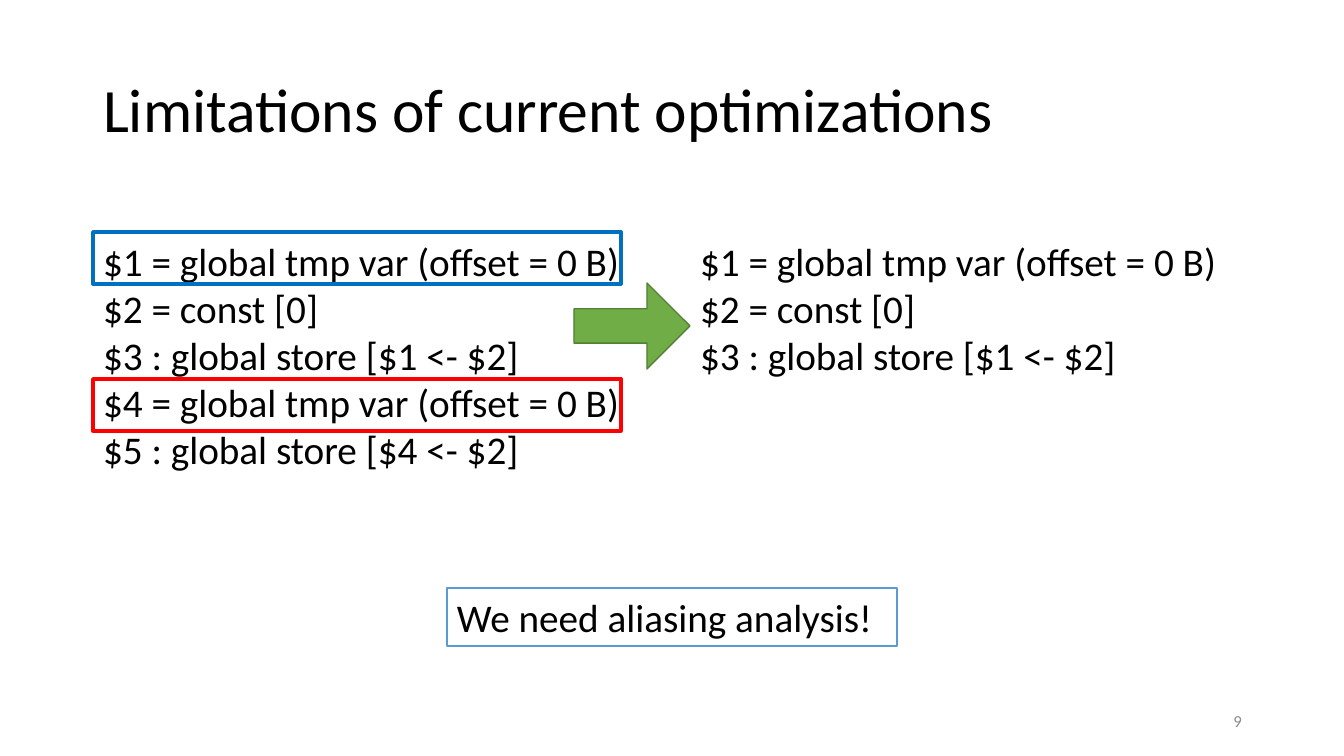
from pptx import Presentation
from pptx.dml.color import RGBColor
from pptx.enum.shapes import MSO_SHAPE
from pptx.enum.text import MSO_ANCHOR, MSO_AUTO_SIZE, PP_ALIGN
from pptx.oxml import parse_xml
from pptx.oxml.ns import nsdecls
from pptx.util import Pt

SCALE = 914400 / 100.8  # EMU per px
COLORS = {
    "text": "000000", "grey": "8C8C8C", "note": "5B9BD5", "red": "FF0000",
    "blue": "0070C0", "green": "70AD47", "edge": "538035",
}


def emu(px):
    return round(px * SCALE)


def color(name):
    return RGBColor.from_string(COLORS[name])


class Deck:
    def __init__(self, width, height):
        self.font = "Calibri"
        self.prs = Presentation()
        self.prs.slide_width, self.prs.slide_height = emu(width), emu(height)
        self.slide = self.prs.slides.add_slide(self.prs.slide_layouts[3])

    def text(self, shape, lines, size, tint="text", align=PP_ALIGN.LEFT,
             anchor=MSO_ANCHOR.TOP, pitch=1.0):
        frame = shape.text_frame
        frame.word_wrap = True
        frame.auto_size = MSO_AUTO_SIZE.NONE
        frame.vertical_anchor = anchor
        for i, line in enumerate(lines):
            par = frame.add_paragraph() if i else frame.paragraphs[0]
            par.alignment, par.line_spacing = align, pitch
            par.space_before = Pt(0)
            run = par.add_run()
            run.text = line
            run.font.name, run.font.size = self.font, Pt(size)
            run.font.color.rgb = color(tint)

    def holder(self, index, box, lines, size, **style):
        shape = self.slide.placeholders[index]
        shape.left, shape.top, shape.width, shape.height = map(emu, box)
        self.text(shape, lines, size, **style)
        return shape

    def title(self, box, text):
        self.holder(0, box, [text], 44, anchor=MSO_ANCHOR.MIDDLE, pitch=0.9)

    def code(self, index, box, lines):
        shape = self.holder(index, box, lines, 28)
        for par in shape.text_frame.paragraphs:
            props = par._p.get_or_add_pPr()
            props.set("marL", "0")
            props.set("indent", "0")
            props.append(parse_xml(f"<a:buNone {nsdecls('a')}/>"))

    def label(self, box, text, size, **style):
        shape = self.slide.shapes.add_textbox(*map(emu, box))
        self.text(shape, [text], size, **style)

    def shape(self, kind, box, line, width, fill=None):
        shape = self.slide.shapes.add_shape(kind, *map(emu, box))
        shape.shadow.inherit = False
        if fill:
            shape.fill.solid()
            shape.fill.fore_color.rgb = color(fill)
        else:
            shape.fill.background()
        shape.line.color.rgb = color(line)
        shape.line.width = Pt(width)
        return shape

    def frame(self, box, line, width=2.5):
        return self.shape(MSO_SHAPE.RECTANGLE, box, line, width)

    def arrow(self, box):
        shape = self.shape(MSO_SHAPE.RIGHT_ARROW, box, "edge", 1, "green")
        shape.adjustments[0] = 0.4
        shape.adjustments[1] = 0.5


def main():
    deck = Deck(1344, 756)
    left, top, row = 93, 232, 49
    code = [
        "$1 = global tmp var (offset = 0 B)",
        "$2 = const [0]",
        "$3 : global store [$1 <- $2]",
        "$4 = global tmp var (offset = 0 B)",
        "$5 : global store [$4 <- $2]",
    ]

    # Title
    deck.title((left, 40, 1159, 146), "Limitations of current optimizations")

    # Code before and after
    deck.code(1, (left, top, 568, 248), code)
    deck.code(2, (690, top, 568, 152), code[:3])

    # Conclusion
    note = deck.frame((447, 588, 450, 58), "note", 2)
    deck.text(note, ["We need aliasing analysis!"], 28)

    # Slide number
    deck.label((950, 701, 302, 40), "9", 12, tint="grey",
               align=PP_ALIGN.RIGHT, anchor=MSO_ANCHOR.MIDDLE)

    # Marked rows and arrow
    for index, tint in ((3, "red"), (0, "blue")):
        deck.frame((left, top + index * row, 528, 52), tint)
    deck.arrow((574, 283, 116, 86))

    deck.prs.save("out.pptx")


if __name__ == "__main__":
    main()
